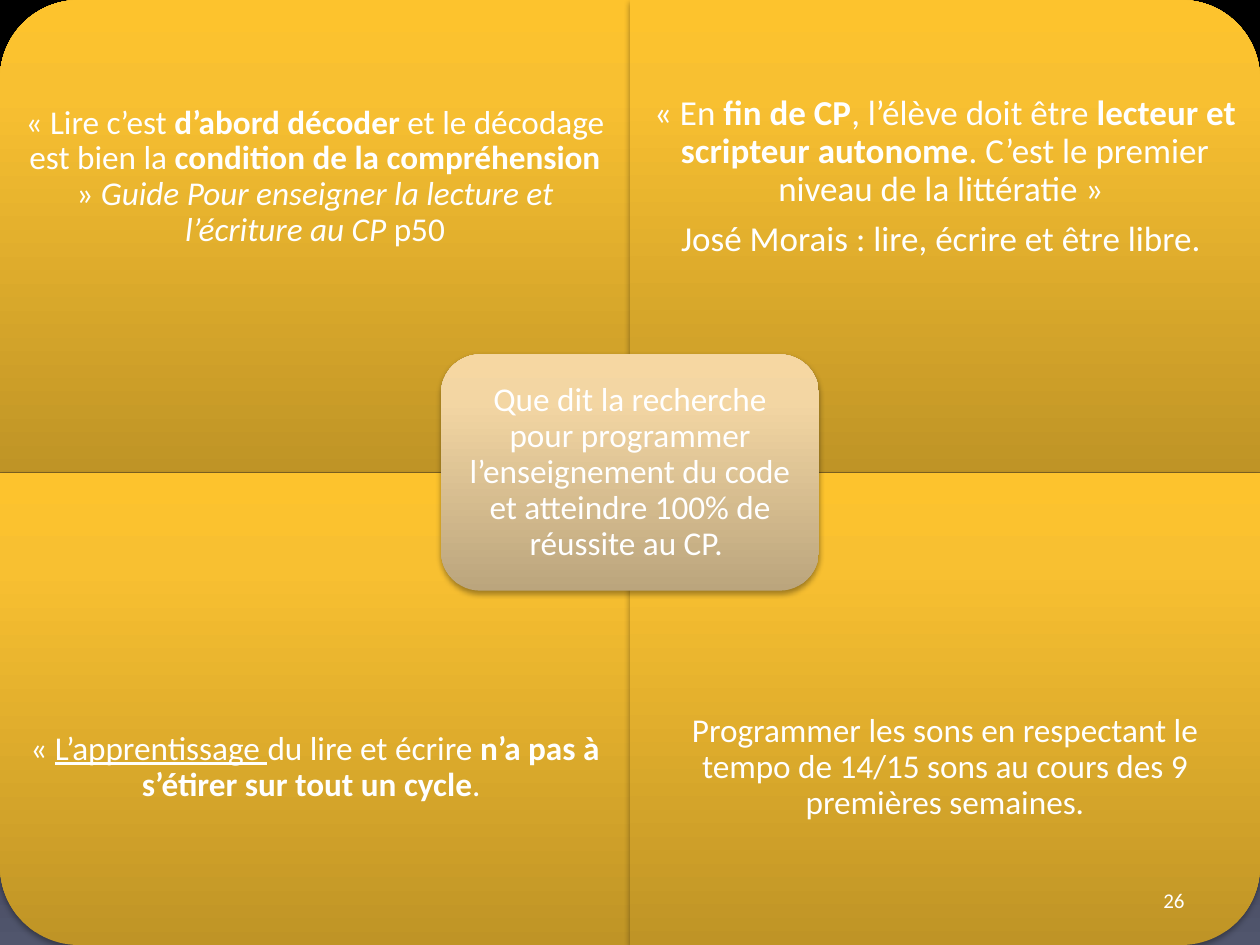
from lxml.etree import SubElement
from pptx import Presentation
from pptx.dml.color import RGBColor
from pptx.enum.shapes import MSO_SHAPE
from pptx.enum.text import MSO_ANCHOR, PP_ALIGN
from pptx.oxml.ns import qn
from pptx.util import Pt

PX = 9525  # EMU per px, 96 px to the inch
SLIDE_WIDTH, SLIDE_HEIGHT = 960, 720

FONT = "Calibri"
WHITE = RGBColor(0xFF, 0xFF, 0xFF)
BLACK = RGBColor(0x00, 0x00, 0x00)
NIGHT = RGBColor(0x24, 0x21, 0x3E)
SLATE = RGBColor(0x51, 0x56, 0x6D)
DARK_GOLD = RGBColor(0xBF, 0x94, 0x26)
GOLD = RGBColor(0xF8, 0xC0, 0x31)
BRIGHT_GOLD = RGBColor(0xFD, 0xC3, 0x2D)
DARK_SAND = RGBColor(0xBB, 0xA5, 0x7D)
SAND = RGBColor(0xF3, 0xD6, 0xA3)
BRIGHT_SAND = RGBColor(0xF6, 0xD7, 0xA2)

BACKGROUND_STOPS = [(0, BLACK), (31, BLACK), (62, NIGHT), (100, SLATE)]
GOLD_STOPS = [(0, DARK_GOLD), (80, GOLD), (100, BRIGHT_GOLD)]
SAND_STOPS = [(0, DARK_SAND), (80, SAND), (100, BRIGHT_SAND)]

# Each quadrant: rotation, font size, inset, paragraphs of (text, style) runs
QUADRANTS = [
    (270, 19, 14, [[
        ("« Lire c’est", ""), (" d’abord décoder", "b"),
        (" et le décodage est bien la ", ""),
        ("condition de la compréhension ", "b"), ("» ", ""),
        ("Guide Pour enseigner la lecture et l’écriture au CP ", "i"),
        ("p50", ""),
    ]]),
    (0, 20, 15, [[
        ("« En ", ""), ("fin de CP", "b"), (", l’élève doit être ", ""),
        ("lecteur et scripteur autonome", "b"),
        (". C’est le premier niveau de la littératie » ", ""),
    ], [("José Morais : lire, écrire et être libre. ", "")]]),
    (180, 19, 14, [[
        ("« ", ""), ("L’apprentissage ", "u"), ("du lire et écrire", ""),
        (" n’a pas à s’étirer sur tout un cycle", "b"), (". ", ""),
    ]]),
    (90, 19, 14, [[
        ("Programmer les sons en respectant le tempo de 14/15 sons "
         "au cours des 9 premières semaines.", ""),
    ]]),
]
CENTRE_TEXT = [[(
    "Que dit la recherche pour programmer l’enseignement du code "
    "et atteindre 100% de réussite au CP. ", "")]]


def set_gradient(fill, parent, stops, angle):
    """Fill with a linear gradient that stays upright when the shape turns."""
    fill.gradient()
    gradient = parent.find(".//" + qn("a:gradFill"))
    for child in list(gradient):
        gradient.remove(child)
    gradient.set("rotWithShape", "0")
    stop_list = SubElement(gradient, qn("a:gsLst"))
    for position, color in stops:
        stop = SubElement(stop_list, qn("a:gs"), pos=str(position * 1000))
        SubElement(stop, qn("a:srgbClr"), val=str(color))
    SubElement(gradient, qn("a:lin"), ang=str(angle * 60000), scaled="0")


def add_shadow(shape):
    shape.shadow.inherit = False
    effects = shape.element.spPr.find(qn("a:effectLst"))
    shadow = SubElement(effects, qn("a:outerShdw"), blurRad="40000",
                        dist="23000", dir="5400000", rotWithShape="0")
    color = SubElement(shadow, qn("a:srgbClr"), val=str(BLACK))
    SubElement(color, qn("a:alpha"), val="35000")


def add_panel(slide, kind, box, stops, rotation=0):
    """Place a panel that covers the box once it is rotated."""
    left, top, width, height = box
    if rotation % 180:
        left, top = left + (width - height) // 2, top + (height - width) // 2
        width, height = height, width
    shape = slide.shapes.add_shape(
        kind, left * PX, top * PX, width * PX, height * PX)
    shape.rotation = rotation
    set_gradient(shape.fill, shape.element.spPr, stops, 270)
    shape.line.fill.background()
    add_shadow(shape)


def add_text(slide, box, paragraphs, size, inset):
    text_box = slide.shapes.add_textbox(*(length * PX for length in box))
    frame = text_box.text_frame
    frame.word_wrap = True
    frame.vertical_anchor = MSO_ANCHOR.MIDDLE
    frame.margin_left = frame.margin_right = inset * PX
    frame.margin_top = frame.margin_bottom = inset * PX
    for index, runs in enumerate(paragraphs):
        paragraph = frame.add_paragraph() if index else frame.paragraphs[0]
        paragraph.alignment = PP_ALIGN.CENTER
        paragraph.line_spacing = 0.9
        paragraph.space_after = Pt(round(size * 0.35))
        set_font(paragraph, size)
        for text, style in runs:
            run = paragraph.add_run()
            run.text = text
            if style == "b":
                run.font.bold = True
            elif style == "i":
                run.font.italic = True
            elif style == "u":
                run.font.underline = True


def set_font(paragraph, size):
    paragraph.font.name = FONT
    paragraph.font.size = Pt(size)
    paragraph.font.color.rgb = WHITE


def add_quadrants(slide, box):
    """Four panels, rounded at the outer corner, text in their outer 3/4."""
    left, top, width, height = box
    width, height = width // 2, height // 2
    text_height = height * 3 // 4
    for index, (rotation, size, inset, paragraphs) in enumerate(QUADRANTS):
        row, column = divmod(index, 2)
        x, y = left + column * width, top + row * height
        add_panel(slide, MSO_SHAPE.ROUND_1_RECTANGLE,
                  (x, y, width, height), GOLD_STOPS, rotation)
        text_top = y + row * (height - text_height)
        add_text(slide, (x, text_top, width, text_height),
                 paragraphs, size, inset)


def add_centre(slide, box):
    left, top, width, height = box
    add_panel(slide, MSO_SHAPE.ROUNDED_RECTANGLE, box, SAND_STOPS)
    edge = 9
    add_text(slide, (left + edge, top + edge, width - 2 * edge,
                     height - 2 * edge), CENTRE_TEXT, 19, 8)


def add_slide_number(slide, box):
    text_box = slide.shapes.add_textbox(*(length * PX for length in box))
    frame = text_box.text_frame
    frame.word_wrap = True
    frame.vertical_anchor = MSO_ANCHOR.MIDDLE
    paragraph = frame.paragraphs[0]
    paragraph.text = "26"
    paragraph.alignment = PP_ALIGN.RIGHT
    set_font(paragraph, 12)


def main():
    presentation = Presentation()
    presentation.slide_width = SLIDE_WIDTH * PX
    presentation.slide_height = SLIDE_HEIGHT * PX
    slide = presentation.slides.add_slide(presentation.slide_layouts[6])
    set_gradient(slide.background.fill, slide.element, BACKGROUND_STOPS, 90)
    add_quadrants(slide, (0, 0, SLIDE_WIDTH, SLIDE_HEIGHT))
    add_centre(slide, (336, 270, 288, 180))
    add_slide_number(slide, (688, 667, 224, 38))
    presentation.save("out.pptx")


if __name__ == "__main__":
    main()
